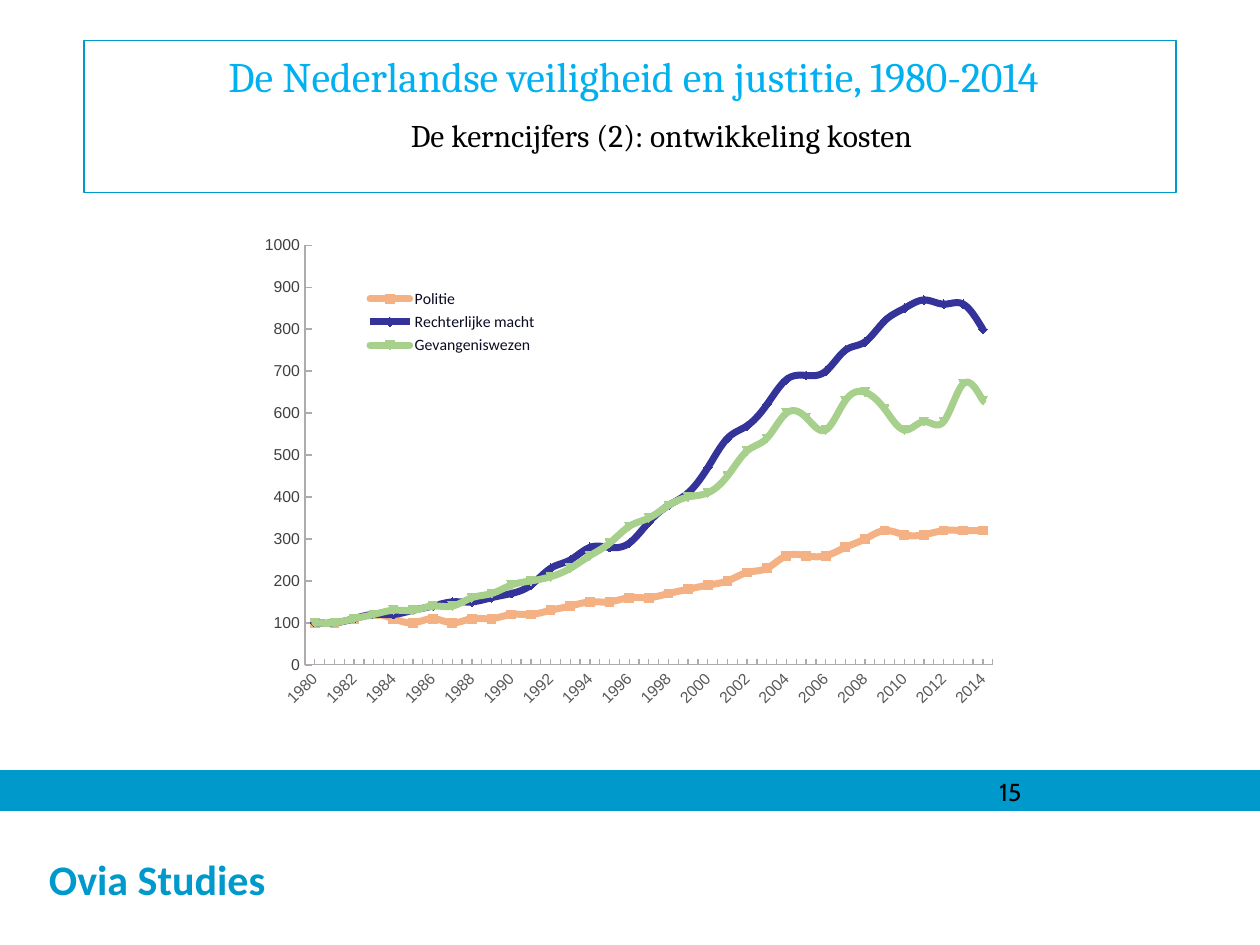
"""Build the slide on the cost development of Dutch security and justice."""
from lxml import etree
from pptx import Presentation
from pptx.chart.data import CategoryChartData
from pptx.dml.color import RGBColor
from pptx.enum.chart import XL_CHART_TYPE, XL_LEGEND_POSITION, XL_TICK_MARK
from pptx.enum.shapes import MSO_SHAPE
from pptx.enum.text import MSO_ANCHOR, PP_ALIGN
from pptx.oxml import parse_xml
from pptx.oxml.ns import nsdecls, qn
from pptx.util import Pt

RECT = MSO_SHAPE.RECTANGLE
LINE = XL_CHART_TYPE.LINE
RIGHT = XL_LEGEND_POSITION.RIGHT
NONE, INSIDE = XL_TICK_MARK.NONE, XL_TICK_MARK.INSIDE
TOP, MIDDLE = MSO_ANCHOR.TOP, MSO_ANCHOR.MIDDLE
LEFT, CENTER = PP_ALIGN.LEFT, PP_ALIGN.CENTER

COLORS = {
    "white": "FFFFFF", "black": "000000", "brand": "0099CC", "title": "00B0F0",
    "axis": "AFABAB", "years": "595959", "values": "404040", "legend": "0B0B22",
    "Politie": "F4B183", "Rechterlijke macht": "333399", "Gevangeniswezen": "A8D08D",
}
SERIES = {
    "Politie": [
        100, 100, 110, 120, 110, 100, 110, 100, 110, 110, 120, 120,
        130, 140, 150, 150, 160, 160, 170, 180, 190, 200, 220, 230,
        260, 260, 260, 280, 300, 320, 310, 310, 320, 320, 320],
    "Rechterlijke macht": [
        100, 100, 110, 120, 120, 130, 140, 150, 150, 160, 170, 190,
        230, 250, 280, 280, 290, 340, 380, 410, 470, 540, 570, 620,
        680, 690, 700, 750, 770, 820, 850, 870, 860, 860, 800],
    "Gevangeniswezen": [
        100, 100, 110, 120, 130, 130, 140, 140, 160, 170, 190, 200,
        210, 230, 260, 290, 330, 350, 380, 400, 410, 450, 510, 540,
        600, 590, 560, 630, 650, 610, 560, 580, 580, 670, 630],
}


def style(font, name, size, color, bold=False):
    font.name, font.size, font.bold = name, Pt(size), bold
    font.color.rgb = RGBColor.from_string(COLORS[color])


def add_rect(left, top, width, height, fill=None, line=None):
    sp = s.shapes.add_shape(RECT, Pt(left), Pt(top), Pt(width), Pt(height))
    sp.shadow.inherit = False
    if fill:
        sp.fill.solid()
        sp.fill.fore_color.rgb = RGBColor.from_string(COLORS[fill])
    else:
        sp.fill.background()
    if line:
        sp.line.color.rgb = RGBColor.from_string(COLORS[line])
        sp.line.width = Pt(0.75)
    else:
        sp.line.fill.background()
    return sp


prs = Presentation()
prs.slide_width, prs.slide_height = Pt(720), Pt(540)
s = prs.slides.add_slide(prs.slide_layouts[6])

footer = add_rect(-0.5, 464, 720.5, 76, fill="white")
tf = footer.text_frame
tf.text = "Ovia Studies"
tf.vertical_anchor = MIDDLE
tf.margin_left = Pt(28.5)
p = tf.paragraphs[0]
p.alignment = LEFT
style(p.runs[0].font, "Calibri", 24, "brand", bold=True)

add_rect(0, 440.5, 720, 22.5, fill="brand", line="brand")

number = s.shapes.add_textbox(Pt(564), Pt(440.5), Pt(150), Pt(18))
tf = number.text_frame
tf.word_wrap = True
tf.text = "15"
style(tf.paragraphs[0].runs[0].font, "Cabin", 14, "black")

data = CategoryChartData()
data.categories = [str(year) for year in range(1980, 2015)]
for name, values in SERIES.items():
    data.add_series(name, values)
chart = s.shapes.add_chart(LINE, Pt(144), Pt(129), Pt(432), Pt(282), data).chart
chart.has_title = False
style(chart.font, "Cabin", 10, "black")

for series in chart.plots[0].series:
    series.smooth = True
    series.format.line.width = Pt(4)
    series.format.line.color.rgb = RGBColor.from_string(COLORS[series.name])
    series.marker.style = None
    series.marker.format.fill.background()
    if series.name != "Rechterlijke macht":
        series.format.line._ln.set("cap", "rnd")

years, costs = chart.category_axis, chart.value_axis
years.major_tick_mark, years.minor_tick_mark = NONE, INSIDE
costs.major_tick_mark, costs.minor_tick_mark = INSIDE, NONE
costs.minimum_scale, costs.maximum_scale, costs.major_unit = 0, 1000, 100
costs.has_major_gridlines = False
for axis, color, width in ((years, "years", 0.75), (costs, "values", 1)):
    style(axis.tick_labels.font, "Arial", 9, color)
    axis.format.line.color.rgb = RGBColor.from_string(COLORS["axis"])
    axis.format.line.width = Pt(width)
years._element.find(qn("c:txPr")).find(qn("a:bodyPr")).set("rot", "-2700000")
skip = etree.Element(qn("c:tickLblSkip"), val="2")
years._element.find(qn("c:noMultiLvlLbl")).addprevious(skip)

chart.has_legend = True
legend = chart.legend
legend.position = RIGHT
legend.include_in_layout = False
style(legend.font, "Calibri", 9, "legend")

plot_area = chart._chartSpace.chart.plotArea
for parent, inner, box in (
    (plot_area, '<c:layoutTarget val="inner"/>', (0.07, 0.04, 0.91, 0.85)),
    (legend._element, "", (0.14, 0.12, 0.25, 0.15)),
):
    for old in parent.findall(qn("c:layout")):
        parent.remove(old)
    modes = '<c:xMode val="edge"/><c:yMode val="edge"/>'
    sizes = "".join(f'<c:{key} val="{value}"/>' for key, value in zip("xywh", box))
    layout = parse_xml(
        f'<c:layout {nsdecls("c")}><c:manualLayout>{inner}{modes}{sizes}'
        "</c:manualLayout></c:layout>")
    parent.insert(0 if parent is plot_area else 1, layout)

header = add_rect(48, 23, 624, 87, line="brand")
tf = header.text_frame
tf.word_wrap = True
tf.vertical_anchor = TOP
tf.margin_top = Pt(6)
tf.text = ("De Nederlandse veiligheid en justitie, 1980-2014\n"
           "De kerncijfers (2): ontwikkeling kosten")
for p, size, color, indent in zip(
        tf.paragraphs, (24, 18), ("title", "black"), (4, 36)):
    p.alignment = CENTER
    p._p.get_or_add_pPr().set("marL", str(Pt(indent)))
    style(p.runs[0].font, "Cambria", size, color)
tf.paragraphs[0].space_after = Pt(8.5)

prs.save("out.pptx")
